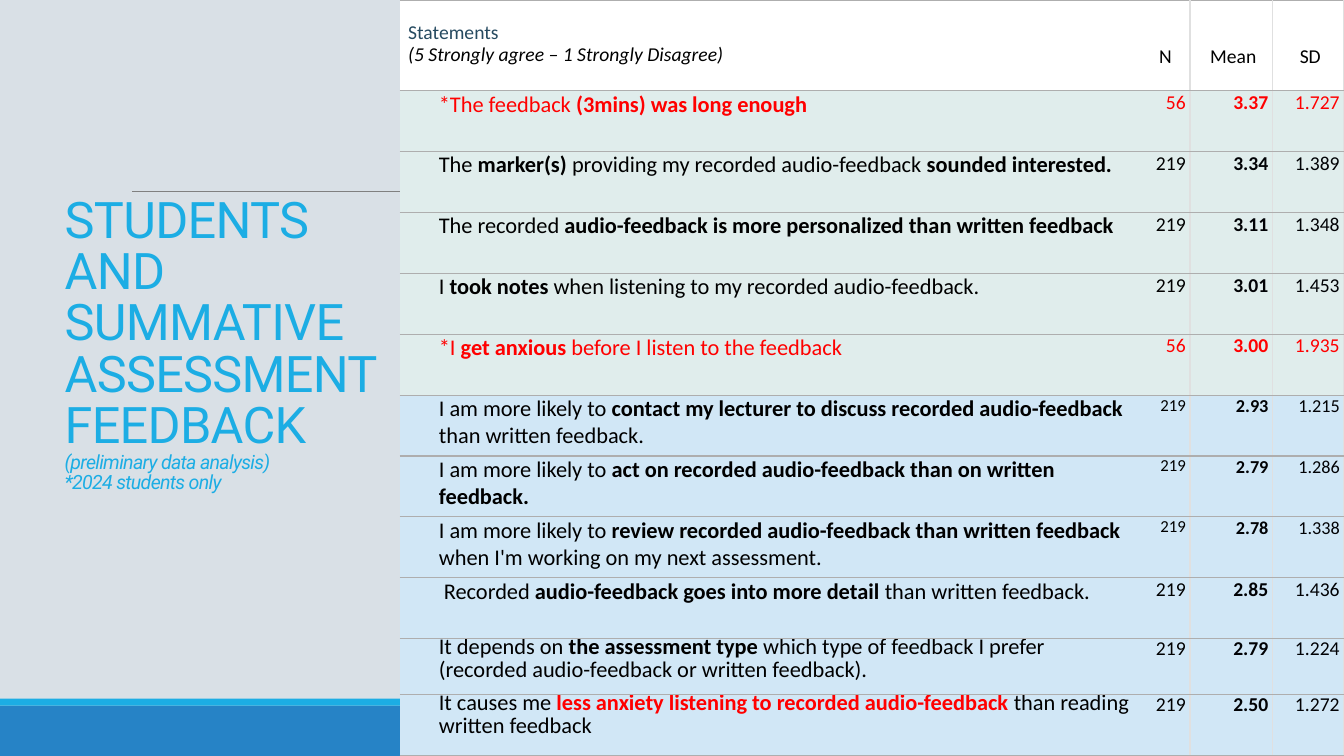
from dataclasses import dataclass

from lxml import etree
from pptx import Presentation
from pptx.dml.color import RGBColor
from pptx.enum import shapes, text
from pptx.oxml import ns
from pptx.util import Pt


@dataclass(frozen=True)
class Theme:
    background: str = "D9E0E6"
    bar: str = "2683C6"
    accent: str = "1CADE4"
    rule: str = "808080"
    heading: str = "264A60"
    black: str = "000000"
    figure: str = "010205"
    red: str = "FF0000"
    white: str = "FFFFFF"
    upper_rows: str = "E0EDEC"
    lower_rows: str = "D1E7F6"
    row_line: str = "AEAEAE"
    column_line: str = "E0E0E0"
    body_font: str = "Calibri"
    title_font: str = "Roboto"
    title_size: float = 36
    statement_size: float = 16
    base_size: float = 14
    medium_size: float = 13
    small_size: float = 12


T = Theme()
LEFT, CENTER, RIGHT = text.PP_ALIGN.LEFT, text.PP_ALIGN.CENTER, text.PP_ALIGN.RIGHT
COLUMN_WIDTHS = (526.5, 38, 59, 51)
HEADER_HEIGHT, ROW_HEIGHT, SHORT_ROW_HEIGHT = 64.8, 43.5, 40
UPPER_COUNT = 5     # rows in the first colour band
TIGHT_FROM = 10     # rows from here on have fixed line spacing
SHORT_ROW = 10
SMALL_ROWS = (6, 7, 8)

# Bold words stand between double asterisks.
ROWS = [
    ("*The feedback **(3mins) was long enough**", "56", "3.37", "1.727"),
    ("The **marker(s)** providing my recorded audio-feedback **sounded interested.**",
     "219", "3.34", "1.389"),
    ("The recorded **audio-feedback is more personalized than written feedback**",
     "219", "3.11", "1.348"),
    ("I **took notes **when listening to my recorded audio-feedback.",
     "219", "3.01", "1.453"),
    ("*I **get anxious** before I listen to the feedback", "56", "3.00", "1.935"),
    ("I am more likely to **contact my lecturer to discuss recorded audio-feedback "
     "**than written feedback.", "219", "2.93", "1.215"),
    ("I am more likely to **act on recorded audio-feedback than on written feedback.**",
     "219", "2.79", "1.286"),
    ("I am more likely to **review recorded audio-feedback than written feedback** "
     "when I'm working on my next assessment.", "219", "2.78", "1.338"),
    (" Recorded **audio-feedback goes into more detail **than written feedback.",
     "219", "2.85", "1.436"),
    ("It depends on **the assessment type **which type of feedback I prefer "
     "(recorded audio-feedback or written feedback).", "219", "2.79", "1.224"),
    ("It causes me **less anxiety listening to recorded audio-feedback "
     "**than reading written feedback", "219", "2.50", "1.272"),
]


def add_text(p, words, size=T.base_size, color=T.black, font=T.body_font,
             bold=False, italic=False, align=LEFT, line=None, spacing=None):
    """Add a run to a paragraph; a newline becomes a line break."""
    p.alignment = align
    if line:
        p.line_spacing = line
    for i, part in enumerate(words.split("\n")):
        if i:
            p.add_line_break()
        r = p.add_run()
        r.text = part
        f = r.font
        f.name, f.size, f.bold, f.italic = font, Pt(size), bold, italic
        f.color.rgb = RGBColor.from_string(color)
        if spacing is not None:
            r._r.get_or_add_rPr().set("spc", str(int(spacing * 100)))


def add_bar(s, top, height, color):
    sp = s.shapes.add_shape(shapes.MSO_SHAPE.RECTANGLE, 0, Pt(top), Pt(960), Pt(height))
    sp.shadow.inherit = False
    sp.fill.solid()
    sp.fill.fore_color.rgb = RGBColor.from_string(color)
    sp.line.fill.background()


def add_rule(s, x1, x2, y):
    line = s.shapes.add_connector(shapes.MSO_CONNECTOR.STRAIGHT,
                                  Pt(x1), Pt(y), Pt(x2), Pt(y))
    line.line.color.rgb = RGBColor.from_string(T.rule)
    line.line.width = Pt(0.5)
    etree.SubElement(line._element.spPr, ns.qn("a:effectLst"))


def set_title(s):
    title = s.shapes.title
    title.left, title.top, title.width, title.height = Pt(39), Pt(41), Pt(243), Pt(454)
    tf = title.text_frame
    tf.word_wrap = True
    tf.auto_size = text.MSO_AUTO_SIZE.NONE
    tf.vertical_anchor = text.MSO_ANCHOR.MIDDLE
    tf.margin_bottom = Pt(46)
    p = tf.paragraphs[0]
    look = dict(color=T.accent, font=T.title_font, line=0.85, spacing=-0.5)
    add_text(p, "STUDENTS AND SUMMATIVE ASSESSMENT FEEDBACK\n", size=T.title_size, **look)
    add_text(p, "(preliminary data analysis)\n*2024 students only", italic=True, **look)


def add_border(cell, side, color):
    tc_pr = cell._tc.get_or_add_tcPr()
    ln = etree.Element(ns.qn(f"a:ln{side}"), w=str(Pt(1)))
    fill = etree.SubElement(ln, ns.qn("a:solidFill"))
    etree.SubElement(fill, ns.qn("a:srgbClr"), val=color)
    tc_pr.insert(len(tc_pr) - 1, ln)


def format_cell(cell, column, fill, left=3, top=0, right=3, bottom=0):
    cell.margin_left, cell.margin_top = Pt(left), Pt(top)
    cell.margin_right, cell.margin_bottom = Pt(right), Pt(bottom)
    cell.fill.solid()
    cell.fill.fore_color.rgb = RGBColor.from_string(fill)
    if column > 1:
        add_border(cell, "L", T.column_line)
    if column > 0:
        add_border(cell, "R", T.column_line)
    for side in "TB":
        add_border(cell, side, T.row_line)


def fill_header(table):
    cell = table.cell(0, 0)
    format_cell(cell, 0, T.white, left=6, top=16)
    tf = cell.text_frame
    add_text(tf.paragraphs[0], "Statements", color=T.heading, line=Pt(16))
    add_text(tf.add_paragraph(), "(5 Strongly agree – 1 Strongly Disagree)",
             italic=True, line=Pt(16))
    for column, label in enumerate(("N", "Mean", "SD"), 1):
        cell = table.cell(0, column)
        format_cell(cell, column, T.white, right=0, bottom=16)
        cell.vertical_anchor = text.MSO_ANCHOR.BOTTOM
        add_text(cell.text_frame.paragraphs[0], label, align=CENTER, line=Pt(16))


def fill_row(table, row, statement, figures):
    fill = T.upper_rows if row <= UPPER_COUNT else T.lower_rows
    line = Pt(16) if row >= TIGHT_FROM else None
    marked = statement.startswith("*")
    color = T.red if marked else T.black
    strong = T.red if row == len(ROWS) else color

    cell = table.cell(row, 0)
    format_cell(cell, 0, fill, left=28, right=0)
    for i, part in enumerate(statement.split("**")):
        if part:
            bold = i % 2 == 1
            add_text(cell.text_frame.paragraphs[0], part, size=T.statement_size,
                     color=strong if bold else color, bold=bold, line=line)

    for column, figure in enumerate(figures, 1):
        cell = table.cell(row, column)
        format_cell(cell, column, fill)
        size = T.base_size
        if row in SMALL_ROWS:
            size = T.small_size if column == 1 else T.medium_size
        figure_color = color if marked or column == 1 else T.figure
        add_text(cell.text_frame.paragraphs[0], figure, size=size, color=figure_color,
                 bold=column == 2, align=RIGHT, line=line)


def add_results_table(s):
    frame = s.shapes.add_table(len(ROWS) + 1, len(COLUMN_WIDTHS), Pt(285.5), 0,
                               Pt(sum(COLUMN_WIDTHS)), Pt(540))
    table = frame.table
    table.horz_banding = False
    style = table._tbl.tblPr.find(ns.qn("a:tableStyleId"))
    style.text = "{2D5ABB26-0587-4C30-8999-92F81FD0307C}"
    for column, width in zip(table.columns, COLUMN_WIDTHS):
        column.width = Pt(width)
    for row in table.rows:
        row.height = Pt(ROW_HEIGHT)
    table.rows[0].height = Pt(HEADER_HEIGHT)
    table.rows[SHORT_ROW].height = Pt(SHORT_ROW_HEIGHT)
    fill_header(table)
    for row, (statement, *figures) in enumerate(ROWS, 1):
        fill_row(table, row, statement, figures)


def main():
    prs = Presentation()
    prs.slide_width, prs.slide_height = Pt(960), Pt(540)
    s = prs.slides.add_slide(prs.slide_layouts[5])
    s.background.fill.solid()
    s.background.fill.fore_color.rgb = RGBColor.from_string(T.background)
    add_bar(s, 504, 36, T.bar)
    add_bar(s, 499, 5, T.accent)
    add_rule(s, 94.5, 879, 136.5)
    set_title(s)
    add_results_table(s)
    prs.save("out.pptx")


if __name__ == "__main__":
    main()
